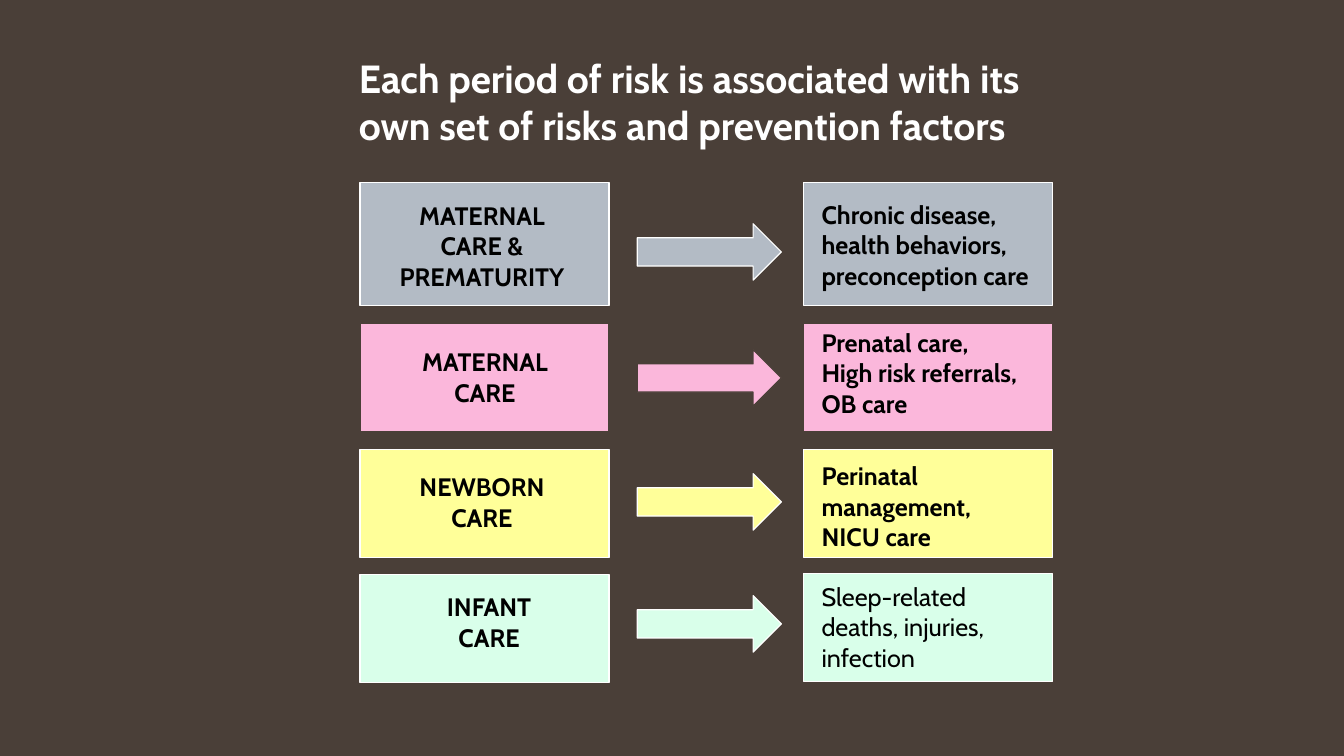
from pptx import Presentation
from pptx.dml.color import RGBColor
from pptx.enum.shapes import MSO_SHAPE
from pptx.enum.text import PP_ALIGN
from pptx.util import Inches, Pt

RECTANGLE, ARROW = MSO_SHAPE.RECTANGLE, MSO_SHAPE.RIGHT_ARROW
LEFT, CENTER = PP_ALIGN.LEFT, PP_ALIGN.CENTER

BROWN = RGBColor(0x4A, 0x3F, 0x38)
WHITE = RGBColor(0xFF, 0xFF, 0xFF)
BLACK = RGBColor(0x00, 0x00, 0x00)
GRAY = RGBColor(0xB3, 0xBB, 0xC5)
PINK = RGBColor(0xFB, 0xB7, 0xDB)
YELLOW = RGBColor(0xFF, 0xFF, 0x99)
MINT = RGBColor(0xD9, 0xFF, 0xEA)

PERIOD_LEFT, ARROW_LEFT, FACTORS_LEFT = 3.57, 6.32, 7.97
BOX_WIDTH = 2.47
ARROW_WIDTH, ARROW_HEIGHT = 1.43, 0.56

prs = Presentation()
prs.slide_width, prs.slide_height = Inches(13.33), Inches(7.5)
slide = prs.slides.add_slide(prs.slide_layouts[6])
slide.background.fill.solid()
slide.background.fill.fore_color.rgb = BROWN


def add_block(kind, left, top, width, height, color, outline):
    block = slide.shapes.add_shape(
        kind, Inches(left), Inches(top), Inches(width), Inches(height))
    block.shadow.inherit = False
    block.fill.solid()
    block.fill.fore_color.rgb = color
    block.line.color.rgb = outline
    block.line.width = Pt(0.85)


def add_text(lines, left, top, width, height, size=18, color=BLACK, bold=True, align=LEFT):
    box = slide.shapes.add_textbox(
        Inches(left), Inches(top), Inches(width), Inches(height))
    frame = box.text_frame
    frame.word_wrap = True
    frame.text = "\n".join(lines)
    for paragraph in frame.paragraphs:
        paragraph.alignment = align
        paragraph.font.name = "Cabin"
        paragraph.font.size = Pt(size)
        paragraph.font.bold = bold
        paragraph.font.color.rgb = color


add_text(["Each period of risk is associated with its own set of risks and prevention factors"],
         3.46, 0.49, 6.98, 1.04, size=28, color=WHITE)

# color, outline, box height, tops of period box, factors box and arrow,
# period, its left, top, width and height, factors, their top and width, bold
rows = [
    (GRAY, WHITE, 1.22, 1.81, 1.81, 2.22,
     "MATERNAL CARE & PREMATURITY", (3.77, 1.94, 2.02, 1.01),
     ["Chronic disease, health behaviors, preconception care"], 1.93, 2.39, True),
    (PINK, BROWN, 1.07, 3.21, 3.21, 3.47,
     "MATERNAL CARE", (3.93, 3.39, 1.76, 0.71),
     ["Prenatal care,", "High risk referrals,", "OB care"], 3.2, 2.26, True),
    (YELLOW, WHITE, 1.07, 4.46, 4.46, 4.7,
     "NEWBORN CARE", (3.9, 4.63, 1.76, 0.71),
     ["Perinatal management,", "NICU care"], 4.52, 2.05, True),
    (MINT, WHITE, 1.07, 5.7, 5.69, 5.91,
     "INFANT CARE", (4.04, 5.82, 1.62, 0.71),
     ["Sleep-related deaths, injuries, infection"], 5.72, 2.14, False),
]

for (color, outline, height, period_top, factors_top, arrow_top,
     period, period_area, factors, text_top, text_width, bold) in rows:
    add_block(RECTANGLE, PERIOD_LEFT, period_top, BOX_WIDTH, height, color, outline)
    add_block(RECTANGLE, FACTORS_LEFT, factors_top, BOX_WIDTH, height, color, outline)
    add_block(ARROW, ARROW_LEFT, arrow_top, ARROW_WIDTH, ARROW_HEIGHT, color, outline)
    add_text([period], *period_area, align=CENTER)
    add_text(factors, 8.05, text_top, text_width, 1.01, bold=bold)

prs.save("out.pptx")
